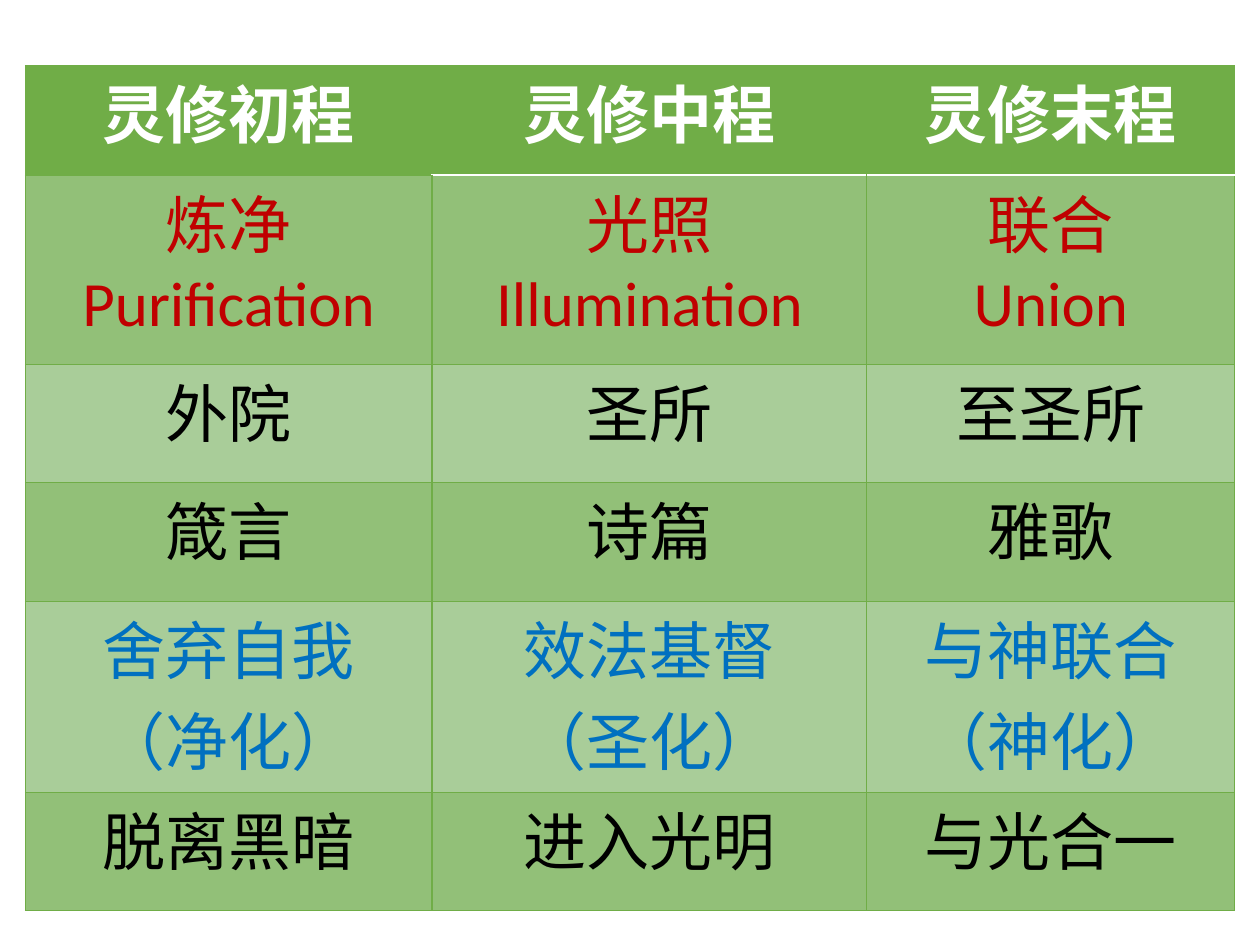
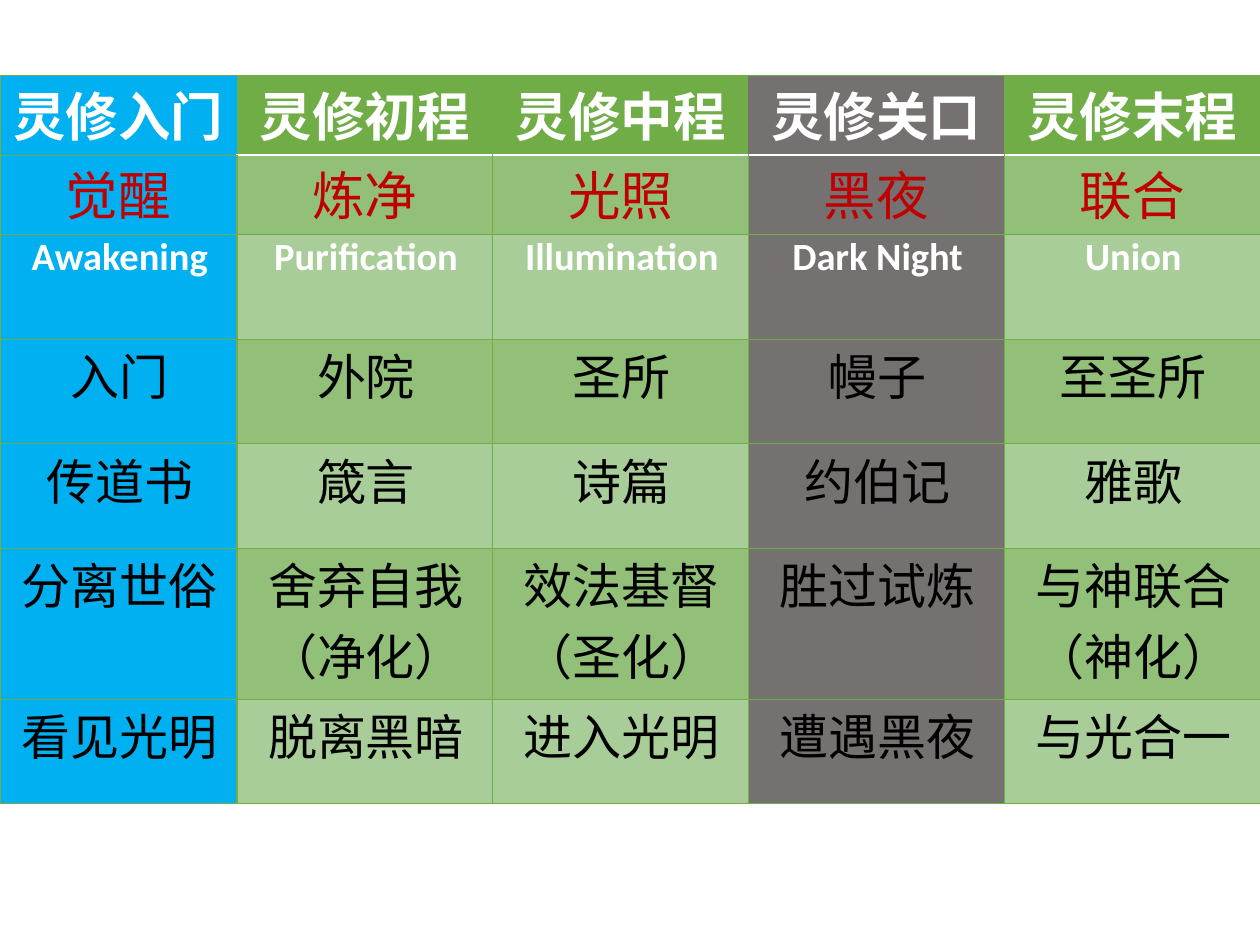
from lxml import etree
from pptx import Presentation
from pptx.dml.color import RGBColor
from pptx.enum.text import PP_ALIGN
from pptx.oxml.ns import qn
from pptx.util import Inches, Pt

CENTER = PP_ALIGN.CENTER
WIDE, HIGH = 10, 7.5
FONT = "Calibri"
GREEN, MID, PALE = "70AD47", "92C078", "A9CD99"
SKY, DUSK = "00B0F0", "767171"
WHITE, BLACK, RED, BLUE = "FFFFFF", "000000", "C00000", "0070C0"
THIN, THICK = (GREEN, 0.5), (GREEN, 1)

# Each row: height, text size, colour, bold, left indent, cell texts
STAGES = [
    (0.87, 36, WHITE, True, 0, ["灵修初程", "灵修中程", "灵修末程"]),
    (1.5, 36, RED, False, 0,
     ["炼净\nPurification", "光照\nIllumination", "联合\nUnion"]),
    (0.94, 36, BLACK, False, 0, ["外院", "圣所", "至圣所"]),
    (0.94, 36, BLACK, False, 0, ["箴言", "诗篇", "雅歌"]),
    (1.52, 36, BLUE, False, 0,
     ["舍弃自我\n（净化）", "效法基督\n（圣化）", "与神联合\n（神化）"]),
    (0.94, 36, BLACK, False, 0, ["脱离黑暗", "进入光明", "与光合一"]),
]
JOURNEY = [
    (0.63, 30, WHITE, True, 0,
     ["灵修入门", "灵修初程", "灵修中程", "灵修关口", "灵修末程"]),
    (0.63, 30, RED, False, 0, ["觉醒", "炼净", "光照", "黑夜", "联合"]),
    (0.83, 22, WHITE, True, 0.02,
     ["Awakening", "Purification", "Illumination", "Dark Night", "Union"]),
    (0.83, 28, BLACK, False, 0.02, ["入门", "外院", "圣所", "幔子", "至圣所"]),
    (0.83, 28, BLACK, False, 0.02, ["传道书", "箴言", "诗篇", "约伯记", "雅歌"]),
    (1.2, 28, BLACK, False, 0.02,
     ["分离世俗", "舍弃自我\n（净化）", "效法基督\n（圣化）", "胜过试炼",
      "与神联合\n（神化）"]),
    (0.83, 28, BLACK, False, 0.02,
     ["看见光明", "脱离黑暗", "进入光明", "遭遇黑夜", "与光合一"]),
]


def color(code):
    return RGBColor.from_string(code)


def add_edge(cell, side, line):
    """Draw one cell border; a line of None leaves that side bare."""
    edge = etree.SubElement(cell._tc.get_or_add_tcPr(), qn("a:ln" + side))
    if line is None:
        etree.SubElement(edge, qn("a:noFill"))
        return
    code, width = line
    edge.set("w", str(Pt(width)))
    fill = etree.SubElement(edge, qn("a:solidFill"))
    etree.SubElement(fill, qn("a:srgbClr")).set("val", code)


def pick_edges(row, col, last):
    """Return border lines by side: bare header seams, heavy first seam."""
    if row == 0:
        return {"L": THIN if col == 0 else None,
                "R": THIN if col == last else None,
                "T": THIN,
                "B": THIN if col == 0 else (WHITE, 1)}
    return {"L": THICK if col == 1 else THIN,
            "R": THICK if col == 0 else THIN,
            "T": (WHITE, 1) if row == 1 and col else THIN,
            "B": THIN}


def pick_fill(row, col, tints):
    if col in tints:
        return tints[col]
    if row == 0:
        return GREEN
    return MID if row % 2 else PALE


def write_cell(cell, text, size, code, bold, indent):
    cell.margin_left = cell.margin_right = Inches(0.07)
    cell.margin_top = cell.margin_bottom = 0
    frame = cell.text_frame
    for i, line in enumerate(text.split("\n")):
        para = frame.add_paragraph() if i else frame.paragraphs[0]
        para.alignment = CENTER
        if indent:
            props = para._p.get_or_add_pPr()
            props.set("marL", str(Inches(indent)))
            props.set("indent", "0")
        run = para.add_run()
        run.text = line
        run.font.name = FONT
        run.font.size = Pt(size)
        run.font.bold = bold
        run.font.color.rgb = color(code)


def add_grid(deck, left, top, widths, rows, tints):
    """Add a slide with a table; tints maps a column to its own fill."""
    slide = deck.slides.add_slide(deck.slide_layouts[6])
    high = sum(row[0] for row in rows)
    table = slide.shapes.add_table(
        len(rows), len(widths), Inches(left), Inches(top),
        Inches(sum(widths)), Inches(high)).table
    table.first_row = table.horz_banding = False
    for column, width in zip(table.columns, widths):
        column.width = Inches(width)
    for r, (height, size, code, bold, indent, texts) in enumerate(rows):
        table.rows[r].height = Inches(height)
        for c, text in enumerate(texts):
            cell = table.cell(r, c)
            for side, line in pick_edges(r, c, len(widths) - 1).items():
                add_edge(cell, side, line)
            cell.fill.solid()
            cell.fill.fore_color.rgb = color(pick_fill(r, c, tints))
            write_cell(cell, text, size, code, bold, indent)


def main():
    deck = Presentation()
    deck.slide_width, deck.slide_height = Inches(WIDE), Inches(HIGH)
    add_grid(deck, 0.2, 0.52, [3.23, 3.45, 2.92], STAGES, {})
    add_grid(deck, 0, 0.6, [1.88] + [2.03] * 4, JOURNEY, {0: SKY, 3: DUSK})
    deck.save("out.pptx")


if __name__ == "__main__":
    main()
